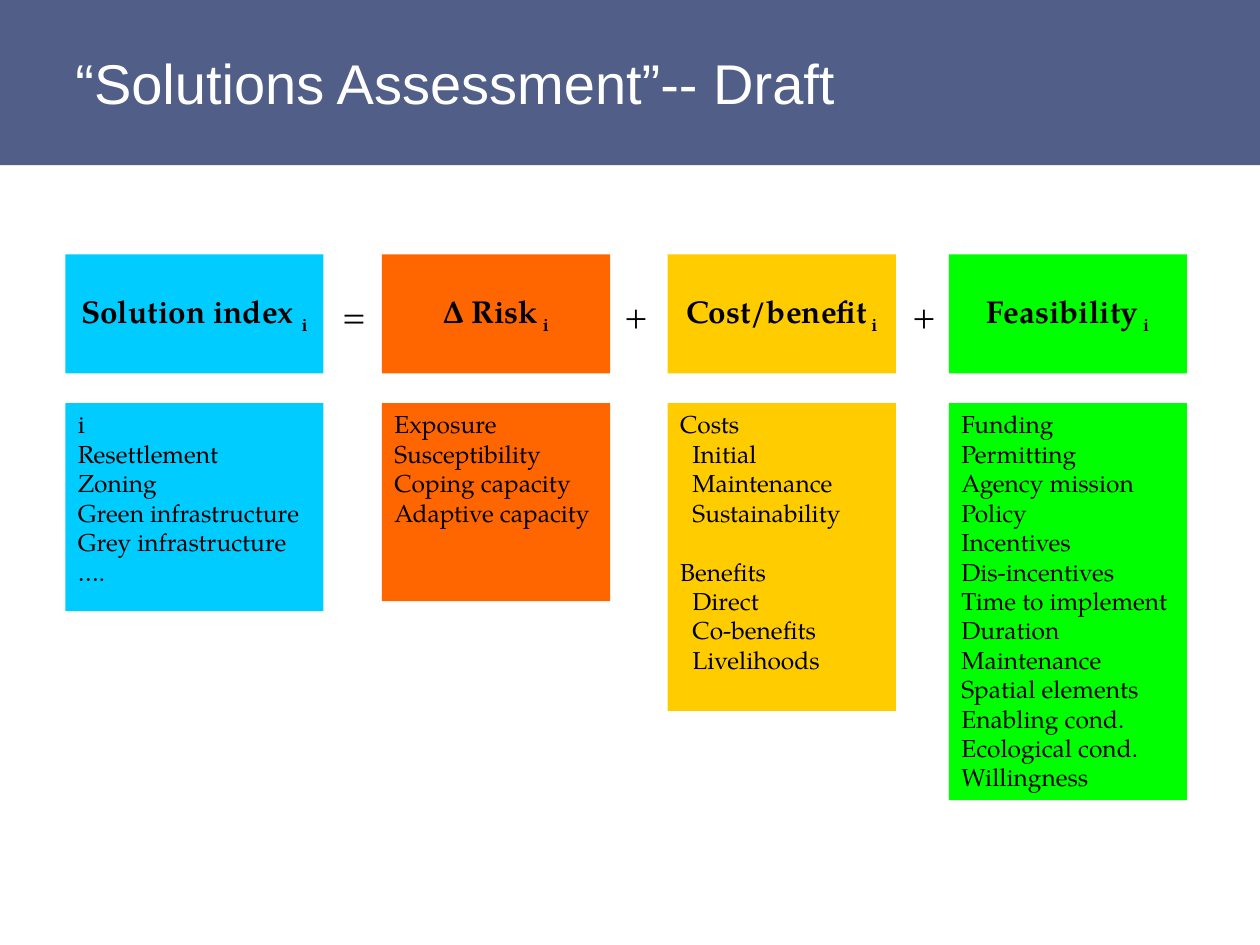
from dataclasses import dataclass

import pptx
import pptx.dml.color
import pptx.enum.shapes
import pptx.enum.text
import pptx.util
from pptx.dml.color import RGBColor
from pptx.util import Cm, Pt

SLATE = RGBColor(0x51, 0x5E, 0x88)
BLUE = RGBColor(0x00, 0xCC, 0xFF)
ORANGE = RGBColor(0xFF, 0x66, 0x00)
YELLOW = RGBColor(0xFF, 0xCC, 0x00)
GREEN = RGBColor(0x00, 0xFF, 0x00)
BLACK = RGBColor(0x00, 0x00, 0x00)
WHITE = RGBColor(0xFF, 0xFF, 0xFF)

TITLE_FONT = "Arial"
BODY_FONT = "TeX Gyre Pagella"

TERM_TOP, TERM_HEIGHT = 5.13, 2.4
DETAIL_TOP = 8.13
OPERATOR_TOP = 5.84
DETAIL_SIZE = 14
GROUP_GAP = 16.8  # one line of detail text, in points


@dataclass(frozen=True)
class Group:
    """Lines of detail, the members indented under an optional heading."""
    members: tuple[str, ...]
    heading: str = ""


@dataclass(frozen=True)
class Term:
    name: str
    subscript: str
    color: RGBColor
    left: float
    width: float
    detail_height: float
    groups: tuple[Group, ...]


@dataclass(frozen=True)
class Operator:
    sign: str
    left: float


TERMS = (
    Term("Solution index ", "i", BLUE, 1.32, 5.2, 4.19, (
        Group(("i", "Resettlement", "Zoning", "Green infrastructure",
               "Grey infrastructure", "….")),)),
    Term("Δ Risk", " i", ORANGE, 7.7, 4.6, 3.99, (
        Group(("Exposure", "Susceptibility", "Coping capacity",
               "Adaptive capacity")),)),
    Term("Cost/benefit", " i", YELLOW, 13.46, 4.6, 6.2, (
        Group(("Initial", "Maintenance", "Sustainability"), "Costs"),
        Group(("Direct", "Co-benefits", "Livelihoods"), "Benefits"))),
    Term("Feasibility", " i", GREEN, 19.13, 4.8, 8.0, (
        Group(("Funding", "Permitting", "Agency mission", "Policy",
               "Incentives", "Dis-incentives", "Time to implement",
               "Duration", "Maintenance", "Spatial elements",
               "Enabling cond.", "Ecological cond.", "Willingness")),)),
)
OPERATORS = (Operator("=", 6.65), Operator("+", 12.34), Operator("+", 18.14))


def set_font(paragraph, size: float, name: str = BODY_FONT,
             color: RGBColor = BLACK, bold: bool = False) -> None:
    font = paragraph.font
    font.name, font.size, font.bold = name, Pt(size), bold
    font.color.rgb = color


def add_block(page, left: float, top: float, width: float, height: float,
              color: RGBColor):
    block = page.shapes.add_shape(
        pptx.enum.shapes.MSO_SHAPE.RECTANGLE,
        Cm(left), Cm(top), Cm(width), Cm(height))
    block.shadow.inherit = False
    block.fill.solid()
    block.fill.fore_color.rgb = color
    block.line.fill.background()
    return block


def add_label(page, text: str, left: float, top: float, width: float,
              height: float, wrap: bool = False):
    """Add a one-line text box and return its paragraph."""
    box = page.shapes.add_textbox(Cm(left), Cm(top), Cm(width), Cm(height))
    box.text_frame.word_wrap = wrap
    paragraph = box.text_frame.paragraphs[0]
    paragraph.text = text
    return paragraph


def add_term(page, term: Term) -> None:
    block = add_block(page, term.left, TERM_TOP, term.width, TERM_HEIGHT,
                      term.color)
    frame = block.text_frame
    frame.word_wrap = False
    frame.vertical_anchor = pptx.enum.text.MSO_ANCHOR.MIDDLE
    paragraph = frame.paragraphs[0]
    paragraph.alignment = pptx.enum.text.PP_ALIGN.CENTER
    set_font(paragraph, 18, bold=True)
    paragraph.add_run().text = term.name
    span = paragraph.add_run()
    span.text = term.subscript
    span._r.get_or_add_rPr().set("baseline", "-25000")


def add_details(page, term: Term) -> None:
    block = add_block(page, term.left, DETAIL_TOP, term.width,
                      term.detail_height, term.color)
    frame = block.text_frame
    frame.word_wrap = True
    frame.vertical_anchor = pptx.enum.text.MSO_ANCHOR.TOP
    paragraph = None
    for group in term.groups:
        lines = ((group.heading,) if group.heading else ()) + group.members
        for index, line in enumerate(lines):
            first = paragraph is None
            paragraph = frame.paragraphs[0] if first else frame.add_paragraph()
            paragraph.text = line
            paragraph.alignment = pptx.enum.text.PP_ALIGN.LEFT
            if group.heading and index > 0:
                paragraph._p.get_or_add_pPr().set("marL", str(Cm(0.25)))
            if index == 0 and not first:
                paragraph.space_before = Pt(GROUP_GAP)
            set_font(paragraph, DETAIL_SIZE)


def main() -> None:
    deck = pptx.Presentation()
    deck.slide_width, deck.slide_height = Cm(25.4), Cm(19.05)
    page = deck.slides.add_slide(deck.slide_layouts[6])

    add_block(page, 0, -0.05, 25.4, 3.38, SLATE)
    title = add_label(page, "“Solutions Assessment”-- Draft",
                      1.27, 0.86, 22.86, 1.6, wrap=True)
    set_font(title, 32, TITLE_FONT, WHITE)

    for term in TERMS:
        add_term(page, term)
        add_details(page, term)
    for operator in OPERATORS:
        sign = add_label(page, operator.sign, operator.left, OPERATOR_TOP,
                         0.86, 1.02)
        set_font(sign, 18)

    deck.save("out.pptx")


if __name__ == "__main__":
    main()
